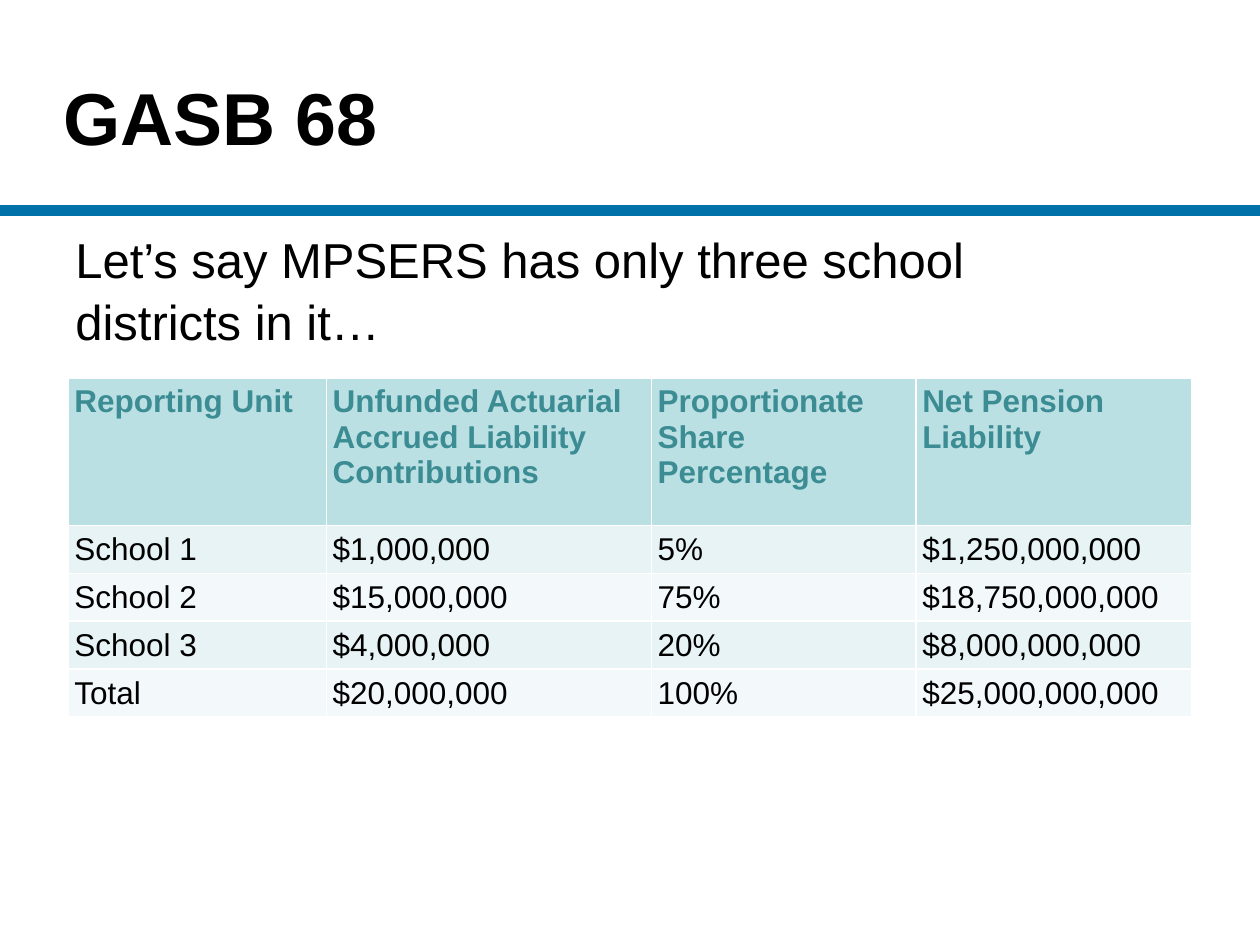
from dataclasses import dataclass

from lxml import etree
from pptx import Presentation
from pptx.dml.color import RGBColor
from pptx.enum.shapes import MSO_CONNECTOR
from pptx.enum.text import MSO_ANCHOR, MSO_AUTO_SIZE, PP_ALIGN
from pptx.oxml.ns import qn
from pptx.util import Inches, Pt

STRAIGHT = MSO_CONNECTOR.STRAIGHT
MIDDLE = MSO_ANCHOR.MIDDLE
NO_AUTOFIT = MSO_AUTO_SIZE.NONE
LEFT = PP_ALIGN.LEFT


@dataclass(frozen=True)
class Theme:
    font: str = "Arial"
    text: str = "000000"
    rule: str = "0071A9"
    header_text: str = "3C8C93"
    header_fill: str = "BBE0E3"
    band_fills: tuple = ("E7F3F4", "F3F9FA")
    title_size: int = 42
    body_size: int = 28
    table_size: int = 18


theme = Theme()


def format_text(text_frame, size, color, bold=False):
    for paragraph in text_frame.paragraphs:
        paragraph.alignment = LEFT
        for run in paragraph.runs:
            run.font.name = theme.font
            run.font.size = Pt(size)
            run.font.bold = bold
            run.font.color.rgb = RGBColor.from_string(color)


presentation = Presentation()
presentation.slide_width = Inches(10)
presentation.slide_height = Inches(7.5)
slide = presentation.slides.add_slide(presentation.slide_layouts[5])

rule = slide.shapes.add_connector(
    STRAIGHT, Inches(0), Inches(1.67), Inches(10), Inches(1.67)
)
rule.line.color.rgb = RGBColor.from_string(theme.rule)
rule.line.width = Pt(6)
etree.SubElement(rule._element.spPr, qn("a:effectLst"))

title = slide.shapes.title
title.left, title.top = Inches(0.4), Inches(0.3)
title.width, title.height = Inches(9), Inches(1.25)
title.text_frame.text = "GASB 68"
title.text_frame.vertical_anchor = MIDDLE
title.text_frame.auto_size = NO_AUTOFIT
format_text(title.text_frame, theme.title_size, theme.text, bold=True)

rows = [
    ("Reporting Unit", "Unfunded Actuarial Accrued Liability Contributions",
     "Proportionate Share Percentage", "Net Pension Liability"),
    ("School 1", "$1,000,000", "5%", "$1,250,000,000"),
    ("School 2", "$15,000,000", "75%", "$18,750,000,000"),
    ("School 3", "$4,000,000", "20%", "$8,000,000,000"),
    ("Total", "$20,000,000", "100%", "$25,000,000,000"),
]
column_widths = [2.05, 2.58, 2.1, 2.19]
header_height, row_height = 1.17, 0.38

table = slide.shapes.add_table(
    len(rows), len(column_widths), Inches(0.54), Inches(3),
    Inches(sum(column_widths)),
    Inches(header_height + row_height * (len(rows) - 1)),
).table
for column, width in zip(table.columns, column_widths):
    column.width = Inches(width)

for row_index, values in enumerate(rows):
    is_header = row_index == 0
    table.rows[row_index].height = Inches(header_height if is_header else row_height)
    fill = theme.header_fill if is_header else theme.band_fills[(row_index - 1) % 2]
    color = theme.header_text if is_header else theme.text
    for column_index, value in enumerate(values):
        cell = table.cell(row_index, column_index)
        cell.margin_left = cell.margin_right = Inches(0.05)
        cell.margin_top = cell.margin_bottom = Inches(0.05)
        cell.fill.solid()
        cell.fill.fore_color.rgb = RGBColor.from_string(fill)
        cell.text_frame.text = value
        format_text(cell.text_frame, theme.table_size, color, bold=is_header)

body = slide.shapes.add_textbox(Inches(0.5), Inches(1.75), Inches(7.92), Inches(1.58))
body.text_frame.word_wrap = True
body.text_frame.text = "Let’s say MPSERS has only three school districts in it…"
body.text_frame.paragraphs[0].line_spacing = 1.05
format_text(body.text_frame, theme.body_size, theme.text)

presentation.save("out.pptx")
